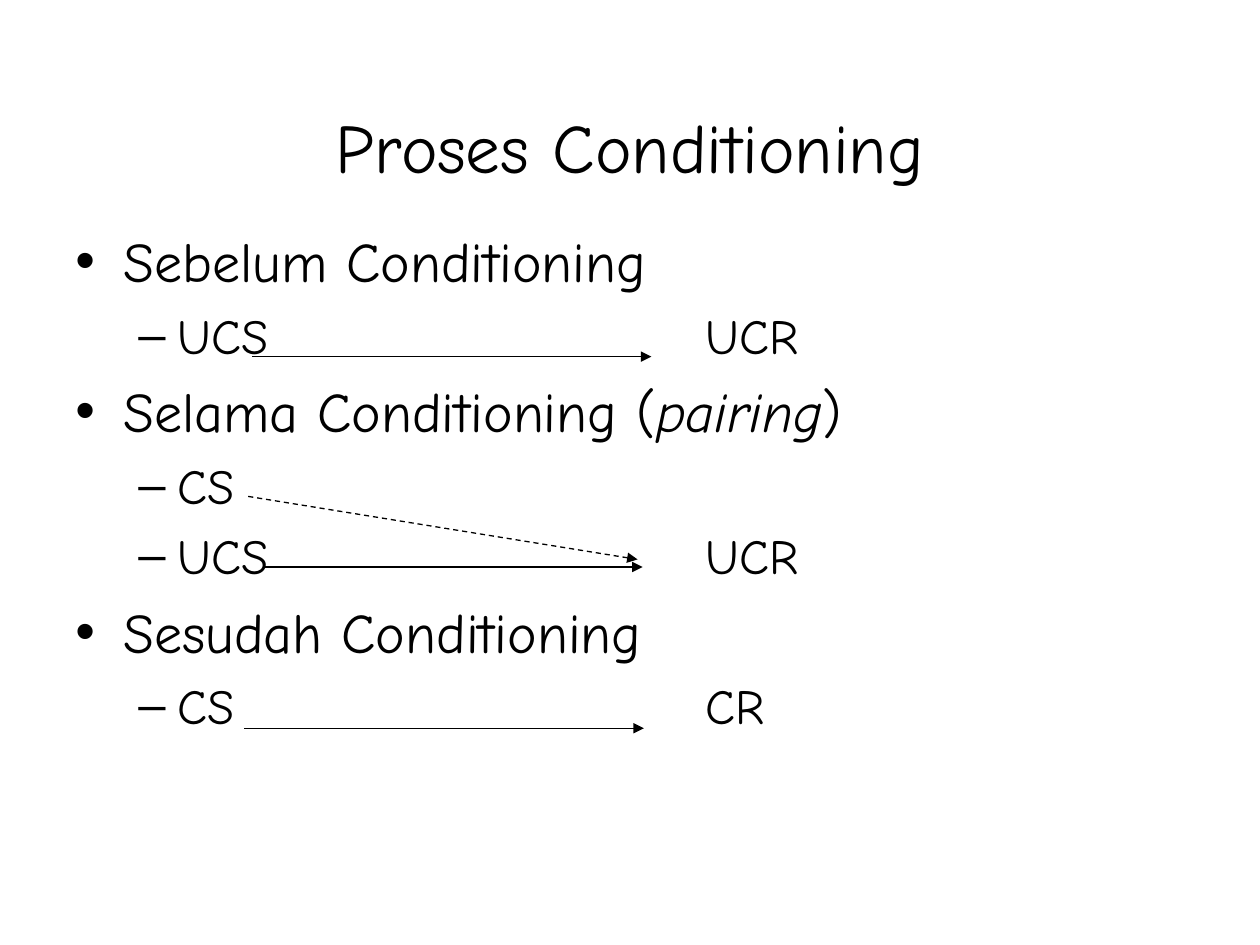
from lxml import etree
from pptx import Presentation
from pptx.dml.color import RGBColor
from pptx.enum.dml import MSO_LINE
from pptx.enum.shapes import MSO_CONNECTOR
from pptx.enum.text import MSO_ANCHOR, PP_ALIGN
from pptx.oxml.ns import qn
from pptx.util import Emu, Pt

PX = 9144  # 100 px to the inch
FONT = "Comic Neue"
BLACK = "000000"
TITLE_ONLY = 5
STRAIGHT = MSO_CONNECTOR.STRAIGHT
DASH = MSO_LINE.DASH
CENTER = PP_ALIGN.CENTER
MIDDLE = MSO_ANCHOR.MIDDLE

RESPONSE_TAB = 500
# bullet, text start, hanging indent, size in points, space before in points
LEVELS = [("•", 38, 38, 32, 7.4), ("–", 81, 31, 28, 6.4)]

OUTLINE = [
    (0, ["Sebelum Conditioning"]),
    (1, ["UCS\tUCR"]),
    (0, ["Selama Conditioning (", "pairing", ")"]),
    (1, ["CS"]),
    (1, ["UCS\tUCR"]),
    (0, ["Sesudah Conditioning"]),
    (1, ["CS\tCR"]),
]
ITALIC_WORDS = {"pairing"}

# start x, start y, end x, end y, dashed
ARROWS = [
    (200, 283, 517, 283, False),
    (197, 394, 506, 444, True),
    (210, 450, 510, 450, False),
    (194, 578, 511, 578, False),
]


def px(value):
    return Emu(value * PX)


def color(hex_string):
    return RGBColor.from_string(hex_string)


def set_font(para, size):
    para.font.name = FONT
    para.font.size = Pt(size)
    para.font.color.rgb = color(BLACK)


def add_title(page, text):
    title = page.shapes.title
    title.left, title.top, title.width, title.height = map(px, (50, 76, 900, 79))
    frame = title.text_frame
    frame.text = text
    frame.vertical_anchor = MIDDLE
    para = frame.paragraphs[0]
    para.alignment = CENTER
    set_font(para, 39.6)


def set_bullet(para, level):
    """Give the paragraph its hanging bullet and the tab stop of the responses."""
    bullet, start, hanging, _, _ = LEVELS[level]
    props = para._p.get_or_add_pPr()
    props.set("marL", str(px(start)))
    props.set("indent", str(px(-hanging)))
    etree.SubElement(props, qn("a:buFont"), typeface="Arial")
    etree.SubElement(props, qn("a:buChar"), char=bullet)
    tabs = etree.SubElement(props, qn("a:tabLst"))
    etree.SubElement(tabs, qn("a:tab"), pos=str(px(RESPONSE_TAB)), algn="l")


def add_outline(page, items):
    box = page.shapes.add_textbox(*map(px, (50, 175, 900, 495)))
    frame = box.text_frame
    frame.word_wrap = True
    for index, (level, parts) in enumerate(items):
        para = frame.add_paragraph() if index else frame.paragraphs[0]
        para.level = level
        set_bullet(para, level)
        _, _, _, size, space = LEVELS[level]
        if index:
            para.space_before = Pt(space)
        set_font(para, size)
        for part in parts:
            span = para.add_run()
            span.text = part
            if part in ITALIC_WORDS:
                span.font.italic = True


def add_arrow(page, x1, y1, x2, y2, dashed):
    arrow = page.shapes.add_connector(STRAIGHT, *map(px, (x1, y1, x2, y2)))
    arrow.line.color.rgb = color(BLACK)
    arrow.line.width = Pt(0.75)
    if dashed:
        arrow.line.dash_style = DASH
    etree.SubElement(arrow.line._get_or_add_ln(), qn("a:tailEnd"), type="triangle")
    etree.SubElement(arrow._element.spPr, qn("a:effectLst"))


def main():
    deck = Presentation()
    deck.slide_width, deck.slide_height = px(1000), px(750)
    page = deck.slides.add_slide(deck.slide_layouts[TITLE_ONLY])
    add_title(page, "Proses Conditioning")
    add_outline(page, OUTLINE)
    for arrow in ARROWS:
        add_arrow(page, *arrow)
    deck.save("out.pptx")


if __name__ == "__main__":
    main()
